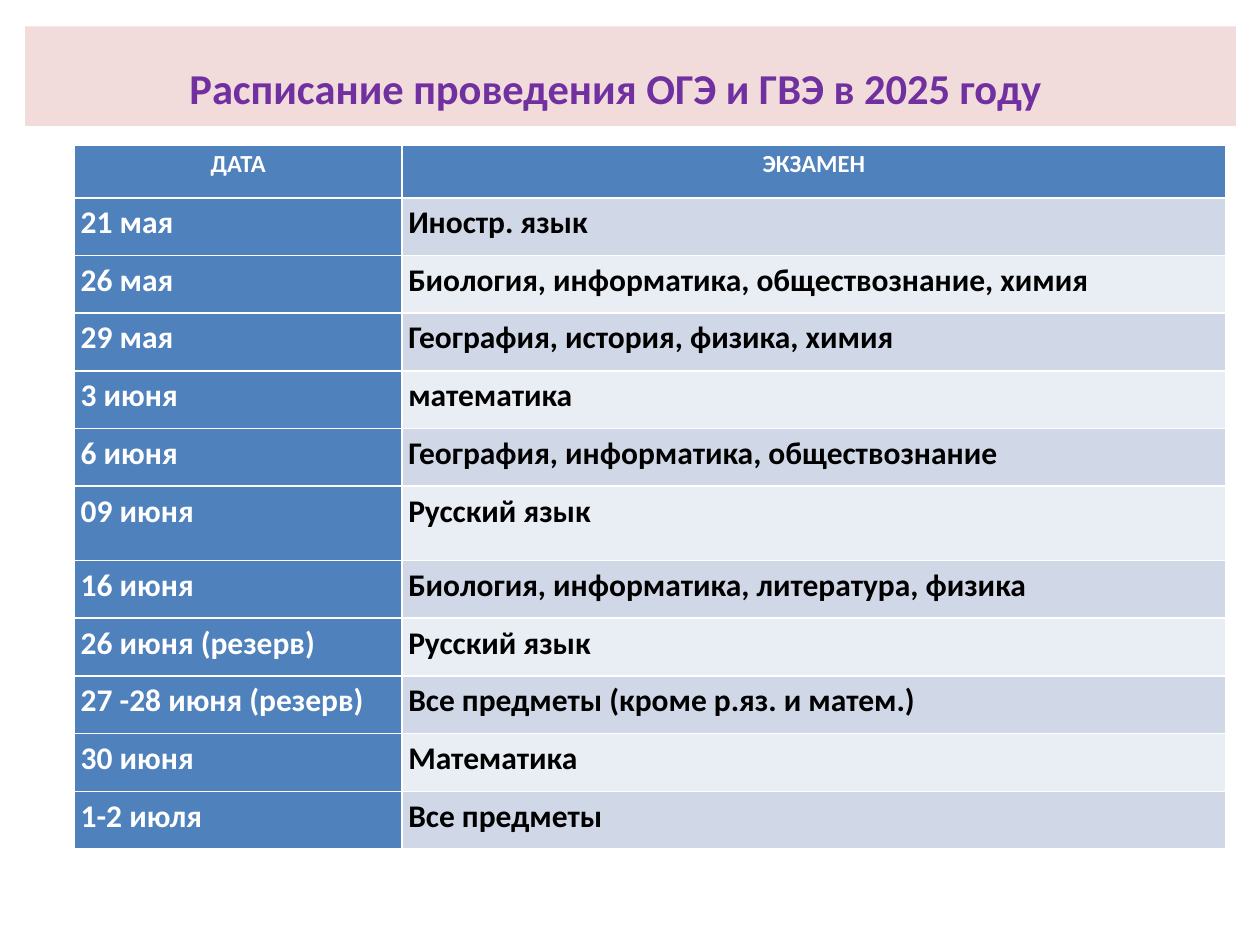
from pptx import Presentation
from pptx.dml.color import RGBColor
from pptx.enum.text import MSO_ANCHOR, PP_ALIGN
from pptx.util import Inches, Pt

CENTER, LEFT = PP_ALIGN.CENTER, PP_ALIGN.LEFT
MIDDLE = MSO_ANCHOR.MIDDLE
FONT = "Calibri"
WHITE = RGBColor(0xFF, 0xFF, 0xFF)
BLACK = RGBColor(0x00, 0x00, 0x00)
PINK = RGBColor(0xF2, 0xDC, 0xDB)
PURPLE = RGBColor(0x70, 0x30, 0xA0)
BLUE = RGBColor(0x4F, 0x81, 0xBD)
BANDS = (RGBColor(0xE9, 0xED, 0xF4), RGBColor(0xD0, 0xD8, 0xE8))

TABLE_HEIGHT, HEADER_HEIGHT, TALL_HEIGHT = 5.59, 0.42, 0.59
TALL_ROW = 6
COLUMN_WIDTHS = (2.6, 6.54)
SCHEDULE = (
    ("ДАТА", "ЭКЗАМЕН"),
    ("21 мая", "Иностр. язык"),
    ("26 мая", "Биология, информатика, обществознание, химия"),
    ("29 мая", "География, история, физика, химия"),
    ("3 июня", "математика"),
    ("6 июня", "География, информатика, обществознание"),
    ("09 июня", "Русский язык"),
    ("16 июня", "Биология, информатика, литература, физика"),
    ("26 июня (резерв)", "Русский язык"),
    ("27 -28 июня (резерв)", "Все предметы (кроме р.яз. и матем.)"),
    ("30 июня", "Математика"),
    ("1-2 июля", "Все предметы"),
)


def format_text(p, size, color, align):
    """Align a paragraph and format its runs in bold."""
    p.alignment = align
    for r in p.runs:
        r.font.name, r.font.size, r.font.bold = FONT, Pt(size), True
        r.font.color.rgb = color


def add_title(slide, text):
    """Place the title on its pink band."""
    sp = slide.shapes.title
    sp.left, sp.top = Inches(0.2), Inches(0.21)
    sp.width, sp.height = Inches(9.61), Inches(0.79)
    sp.fill.solid()
    sp.fill.fore_color.rgb = PINK
    tf = sp.text_frame
    tf.text = text
    tf.word_wrap = True
    tf.vertical_anchor = MIDDLE
    tf.margin_top, tf.margin_bottom = Inches(0.23), Inches(0.05)
    tf.margin_left, tf.margin_right = Inches(0.1), Inches(0.34)
    format_text(tf.paragraphs[0], 24.3, PURPLE, CENTER)


def fill_cell(cell, text, row, col):
    """Write one table cell and colour it by its place."""
    header = row == 0
    accent = header or col == 0
    cell.fill.solid()
    cell.fill.fore_color.rgb = BLUE if accent else BANDS[row % 2]
    cell.margin_left = cell.margin_right = Inches(0.05)
    cell.margin_top = cell.margin_bottom = 0
    p = cell.text_frame.paragraphs[0]
    p.text = text
    p.line_spacing = 1.15
    format_text(p, 14 if header else 18, WHITE if accent else BLACK,
                CENTER if header else LEFT)


def add_schedule(slide):
    """Add the exam table with a header row and a date column."""
    rows = len(SCHEDULE)
    table = slide.shapes.add_table(
        rows, len(COLUMN_WIDTHS), Inches(0.59), Inches(1.15),
        Inches(sum(COLUMN_WIDTHS)), Inches(TABLE_HEIGHT)).table
    table.first_col = True
    for column, width in zip(table.columns, COLUMN_WIDTHS):
        column.width = Inches(width)
    regular = (TABLE_HEIGHT - HEADER_HEIGHT - TALL_HEIGHT) / (rows - 2)
    special = {0: HEADER_HEIGHT, TALL_ROW: TALL_HEIGHT}
    for i, texts in enumerate(SCHEDULE):
        table.rows[i].height = Inches(special.get(i, regular))
        for j, text in enumerate(texts):
            fill_cell(table.cell(i, j), text, i, j)


def main():
    """Build and save the exam schedule slide."""
    prs = Presentation()
    prs.slide_width, prs.slide_height = Inches(10), Inches(7.5)
    slide = prs.slides.add_slide(prs.slide_layouts[5])
    add_title(slide, "Расписание проведения ОГЭ и ГВЭ в 2025 году")
    add_schedule(slide)
    prs.save("out.pptx")


if __name__ == "__main__":
    main()
